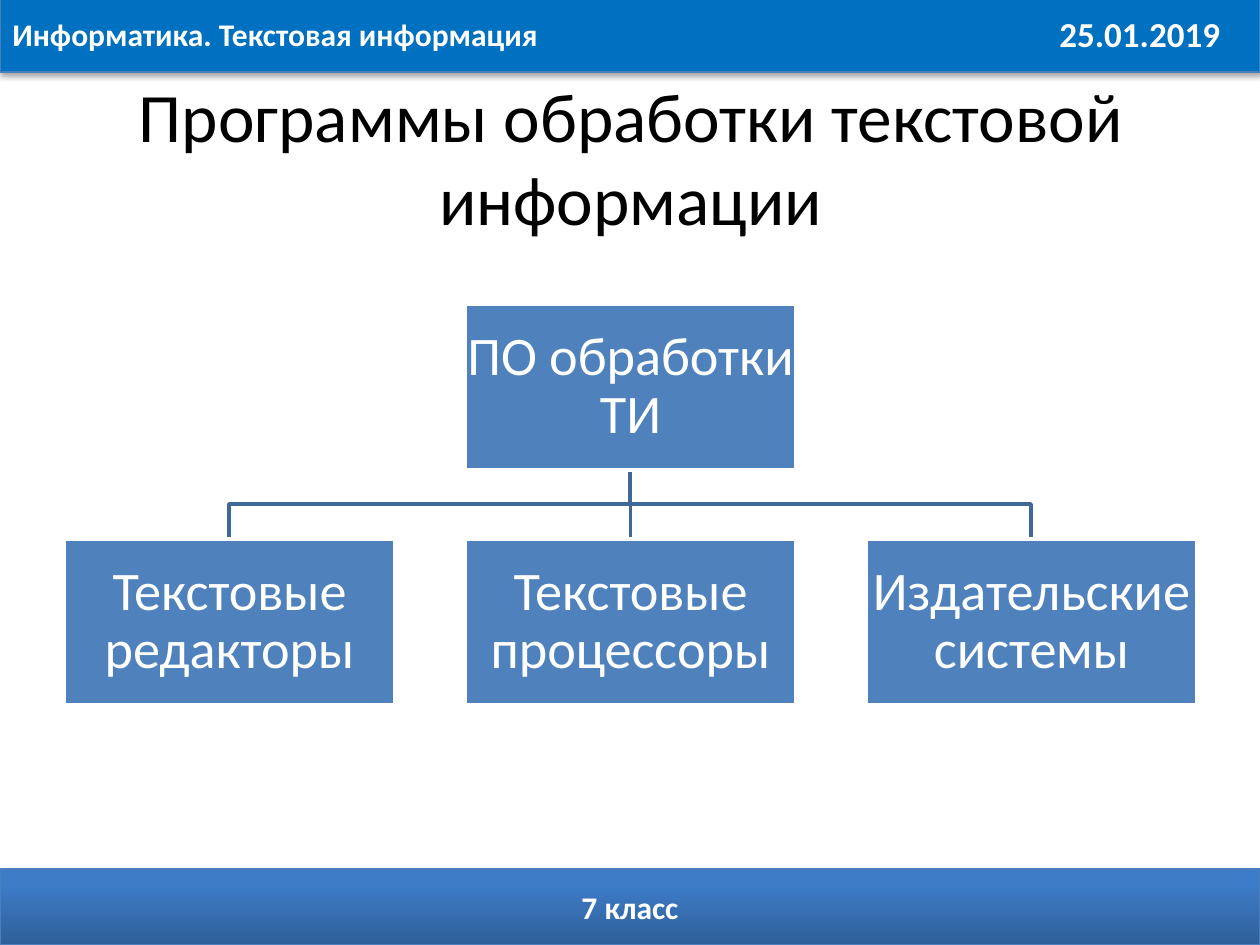
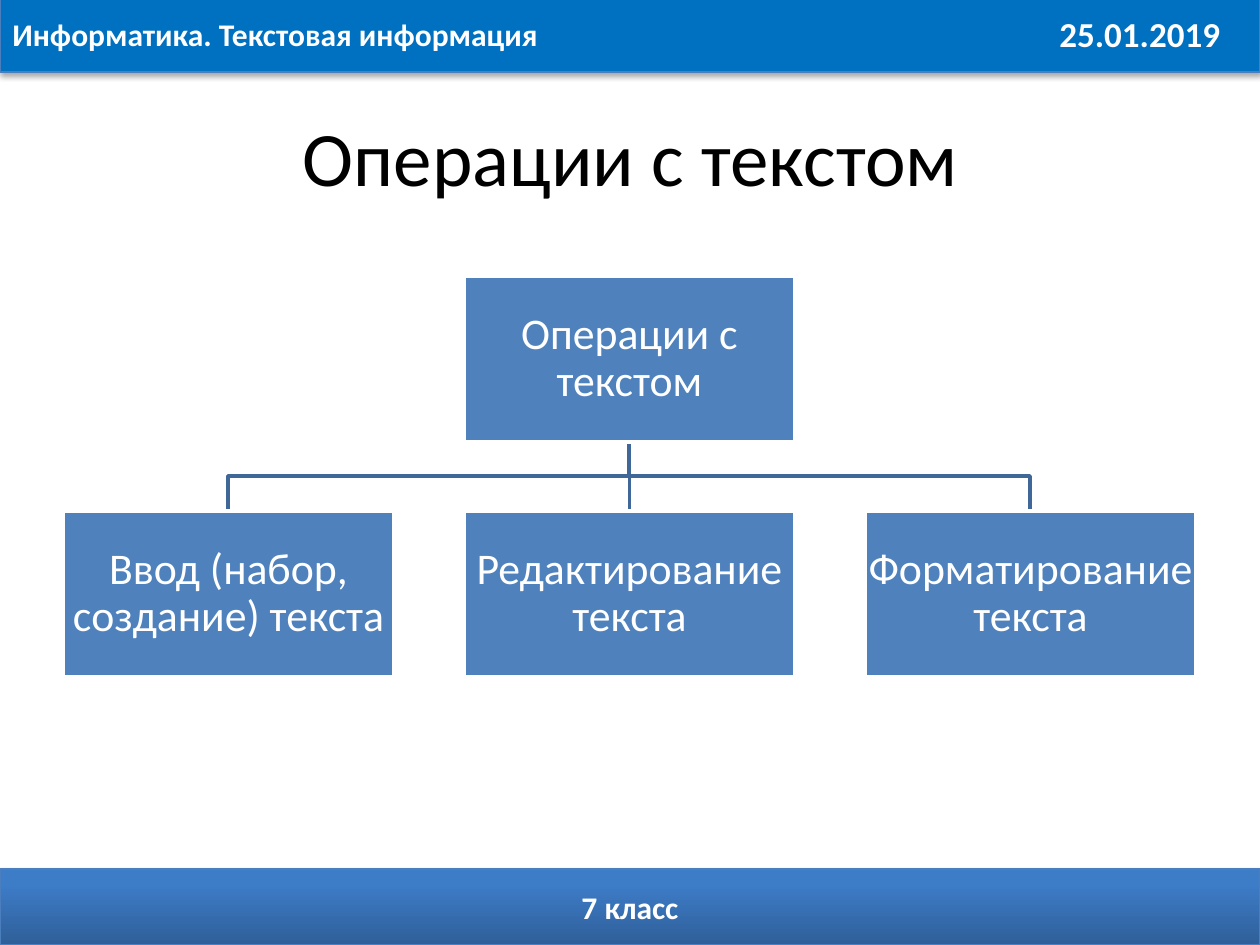
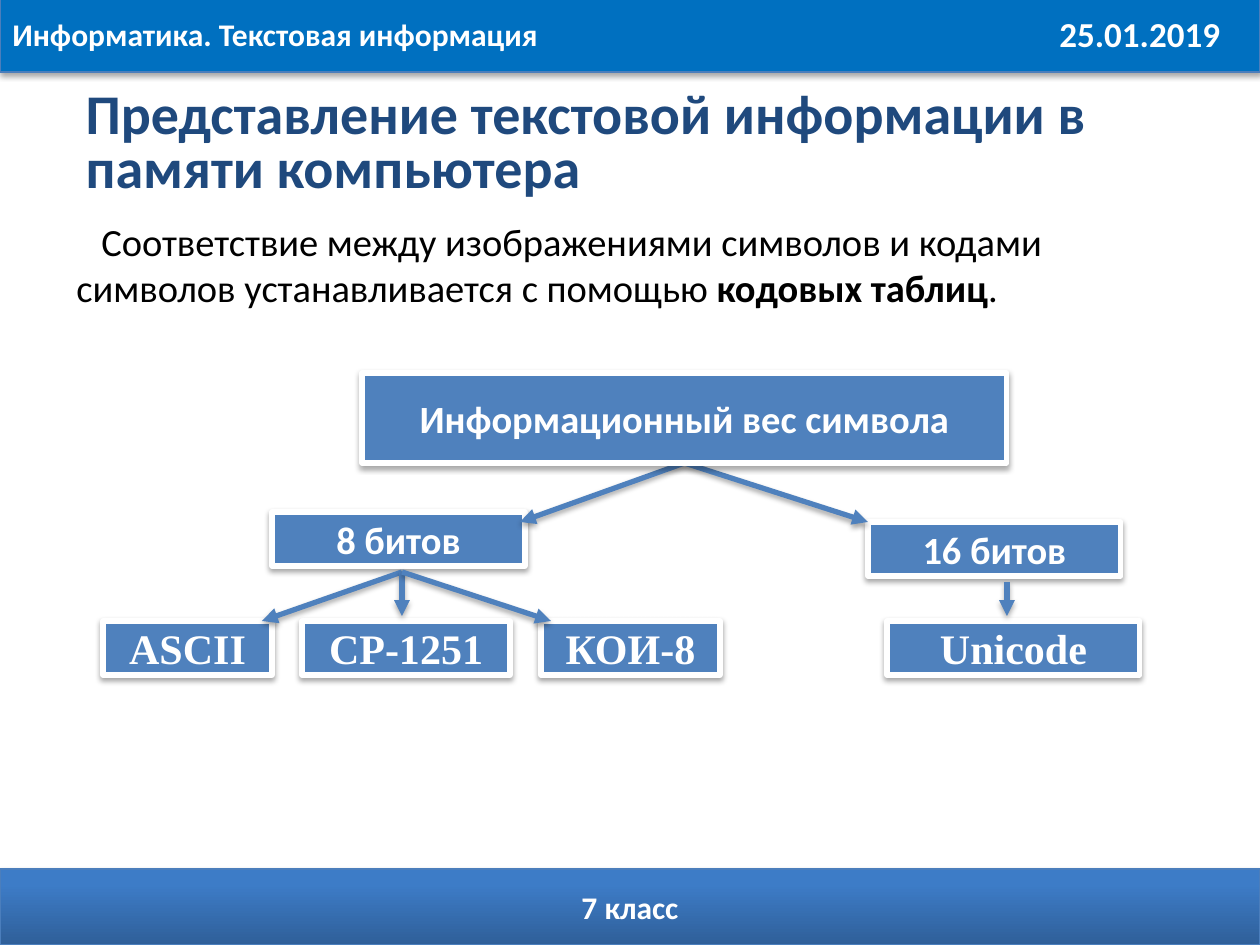
"""Build three slides on text processing, with shared header and footer bands."""
from pptx import Presentation
from pptx.dml.color import RGBColor
from pptx.enum.shapes import MSO_CONNECTOR, MSO_SHAPE
from pptx.enum.text import MSO_ANCHOR, MSO_AUTO_SIZE, PP_ALIGN
from pptx.oxml import parse_xml
from pptx.oxml.ns import nsdecls
from pptx.util import Inches, Pt

PX = 7257
COLORS = {
    "header": "0070C0", "footer_dark": "2F5F99", "footer_light": "3D7CC7",
    "band_line": "4B7EBC", "box": "4F81BD", "tree_line": "3F6797",
    "heading": "1F497D", "white": "FFFFFF", "black": "000000",
}
RGB = {name: RGBColor.from_string(value) for name, value in COLORS.items()}


def style(sp, line, width, shadow=False, fill=None):
    """Set the fill, line and shadow of a shape or connector."""
    if fill:
        sp.fill.solid()
        sp.fill.fore_color.rgb = RGB[fill]
    sp.line.color.rgb = RGB[line]
    sp.line.width = Pt(width)
    outer = ('<a:outerShdw blurRad="40000" dist="23000" dir="5400000" rotWithShape="0">'
             '<a:srgbClr val="000000"><a:alpha val="35000"/></a:srgbClr></a:outerShdw>')
    sp.element.spPr.append(parse_xml(
        f'<a:effectLst {nsdecls("a")}>{outer if shadow else ""}</a:effectLst>'))


def write(p, text, size, color="white", bold=False, font="Calibri", align=PP_ALIGN.CENTER):
    """Add one formatted run to a paragraph."""
    p.alignment = align
    r = p.add_run()
    r.text = text
    r.font.size = Pt(size)
    r.font.name = font
    r.font.bold = bold
    r.font.color.rgb = RGB[color]


prs = Presentation()
prs.slide_width, prs.slide_height = Inches(10), Inches(7.5)
layout = prs.slide_layouts[5]
for ph in list(layout.placeholders)[1:]:
    ph.element.getparent().remove(ph.element)

titles = [
    ("Программы обработки текстовой информации", 39.6),
    ("Операции с текстом", 44),
    ("Представление текстовой информации в памяти компьютера", 32),
]
slides = []
for i, (text, size) in enumerate(titles):
    s = prs.slides.add_slide(layout)
    slides.append(s)
    is_heading = i == 2
    title = s.shapes.title
    at = (73, 86, 1072, 118) if is_heading else (64, 77, 1134, 158)
    title.left, title.top, title.width, title.height = [v * PX for v in at]
    tf = title.text_frame
    tf.auto_size = MSO_AUTO_SIZE.NONE
    tf.vertical_anchor = MSO_ANCHOR.MIDDLE
    p = tf.paragraphs[0]
    if is_heading:
        p.line_spacing = 0.8
        write(p, text, size, "heading", True, align=PP_ALIGN.LEFT)
    else:
        write(p, text, size, "black")

bands = [
    (-4, "Информатика. Текстовая информация", PP_ALIGN.LEFT),
    (869, "7 класс", PP_ALIGN.CENTER),
]
shared = []
for top, text, align in bands:
    sp = slides[0].shapes.add_shape(MSO_SHAPE.RECTANGLE, 0, top * PX, prs.slide_width, 76 * PX)
    style(sp, "band_line", 0.75, shadow=True, fill="header")
    sp.text_frame.vertical_anchor = MSO_ANCHOR.MIDDLE
    write(sp.text_frame.paragraphs[0], text, 18, bold=True, align=align)
    shared.append(sp)
footer = shared[1]
footer.fill.gradient()
footer.fill.gradient_angle = 90
for stop, position, color in zip(footer.fill.gradient_stops, (0, 0.8),
                                 ("footer_dark", "footer_light")):
    stop.position = position
    stop.color.rgb = RGB[color]
date = slides[0].shapes.add_textbox(1047 * PX, 6 * PX, 195 * PX, 50 * PX)
date.text_frame.word_wrap = True
write(date.text_frame.paragraphs[0], "25.01.2019", 20, bold=True, align=PP_ALIGN.LEFT)
for sp in [*shared, date]:
    layout.shapes.element.append(sp.element)

BOX_W, BOX_H, STEP, DROP = 331, 166, 401, 235
trees = [
    (64, 304, 31, "ПО обработки ТИ",
     ["Текстовые редакторы", "Текстовые процессоры", "Издательские системы"]),
    (63, 276, 25, "Операции с текстом",
     ["Ввод (набор, создание) текста", "Редактирование текста", "Форматирование текста"]),
]
for s, (left, top, size, root_text, children) in zip(slides, trees):
    places = [(root_text, left + STEP, top)]
    places += [(text, left + i * STEP, top + DROP) for i, text in enumerate(children)]
    boxes = []
    for text, x, y in places:
        sp = s.shapes.add_shape(MSO_SHAPE.RECTANGLE, x * PX, y * PX, BOX_W * PX, BOX_H * PX)
        style(sp, "white", 2, fill="box")
        tf = sp.text_frame
        tf.word_wrap = True
        tf.vertical_anchor = MSO_ANCHOR.MIDDLE
        tf.margin_left = tf.margin_right = tf.margin_top = tf.margin_bottom = 2 * PX
        tf.paragraphs[0].line_spacing = 0.9
        write(tf.paragraphs[0], text, size)
        boxes.append(sp)
    root, middle_child = boxes[0], boxes[2]

    middle = left + STEP + BOX_W // 2
    bottom, bend, child_top = top + BOX_H, top + 200, top + DROP
    for x in (middle - STEP, middle + STEP):
        builder = s.shapes.build_freeform(middle, bottom, scale=PX)
        builder.add_line_segments([(middle, bend), (x, bend), (x, child_top)], close=False)
        branch = builder.convert_to_shape()
        branch.fill.background()
        style(branch, "tree_line", 2)
        root.element.addprevious(branch.element)
    stem = s.shapes.add_connector(MSO_CONNECTOR.STRAIGHT, 0, 0, 0, 0)
    stem.begin_connect(root, 2)
    stem.end_connect(middle_child, 0)
    style(stem, "tree_line", 2)
    root.element.addprevious(stem.element)

s = slides[2]
body = s.shapes.add_textbox(64 * PX, 212 * PX, 1091 * PX, 105 * PX)
body.text_frame.word_wrap = True
p = body.text_frame.paragraphs[0]
p._p.get_or_add_pPr().set("indent", str(25 * PX))
for text, bold in [
    ("Соответствие между изображениями символов и кодами символов "
     "устанавливается с помощью ", False),
    ("кодовых таблиц", True),
    (".", False),
]:
    write(p, text, 22, "black", bold, align=PP_ALIGN.LEFT)

code_boxes = [
    ("8 битов", 272, 512, 253, 54, 22, "Calibri"),
    ("16 битов", 868, 522, 253, 54, 22, "Calibri"),
    ("ASCII", 103, 621, 169, 54, 24, "Times New Roman"),
    ("CP-1251", 302, 621, 208, 54, 24, "Times New Roman"),
    ("КОИ-8", 541, 621, 179, 54, 24, "Times New Roman"),
    ("Unicode", 887, 621, 253, 54, 24, "Times New Roman"),
    ("Информационный вес символа", 362, 373, 645, 90, 22, "Calibri"),
]
for text, x, y, w, h, size, font in code_boxes:
    sp = s.shapes.add_shape(MSO_SHAPE.RECTANGLE, x * PX, y * PX, w * PX, h * PX)
    style(sp, "white", 3, shadow=True, fill="box")
    sp.text_frame.word_wrap = False
    sp.text_frame.vertical_anchor = MSO_ANCHOR.MIDDLE
    write(sp.text_frame.paragraphs[0], text, size, bold=True, font=font)
weight = sp

arrows = [
    (684, 463, 520, 522), (684, 463, 868, 522),
    (402, 572, 262, 621), (402, 572, 402, 616), (402, 572, 551, 621),
    (1007, 582, 1007, 616),
]
for i, ends in enumerate(arrows):
    arrow = s.shapes.add_connector(MSO_CONNECTOR.STRAIGHT, *[v * PX for v in ends])
    if i < 2:
        arrow.begin_connect(weight, 2)
    style(arrow, "box", 3, shadow=True)
    arrow.line._get_or_add_ln().append(parse_xml(f'<a:tailEnd {nsdecls("a")} type="triangle"/>'))
    weight.element.addprevious(arrow.element)

prs.save("out.pptx")
